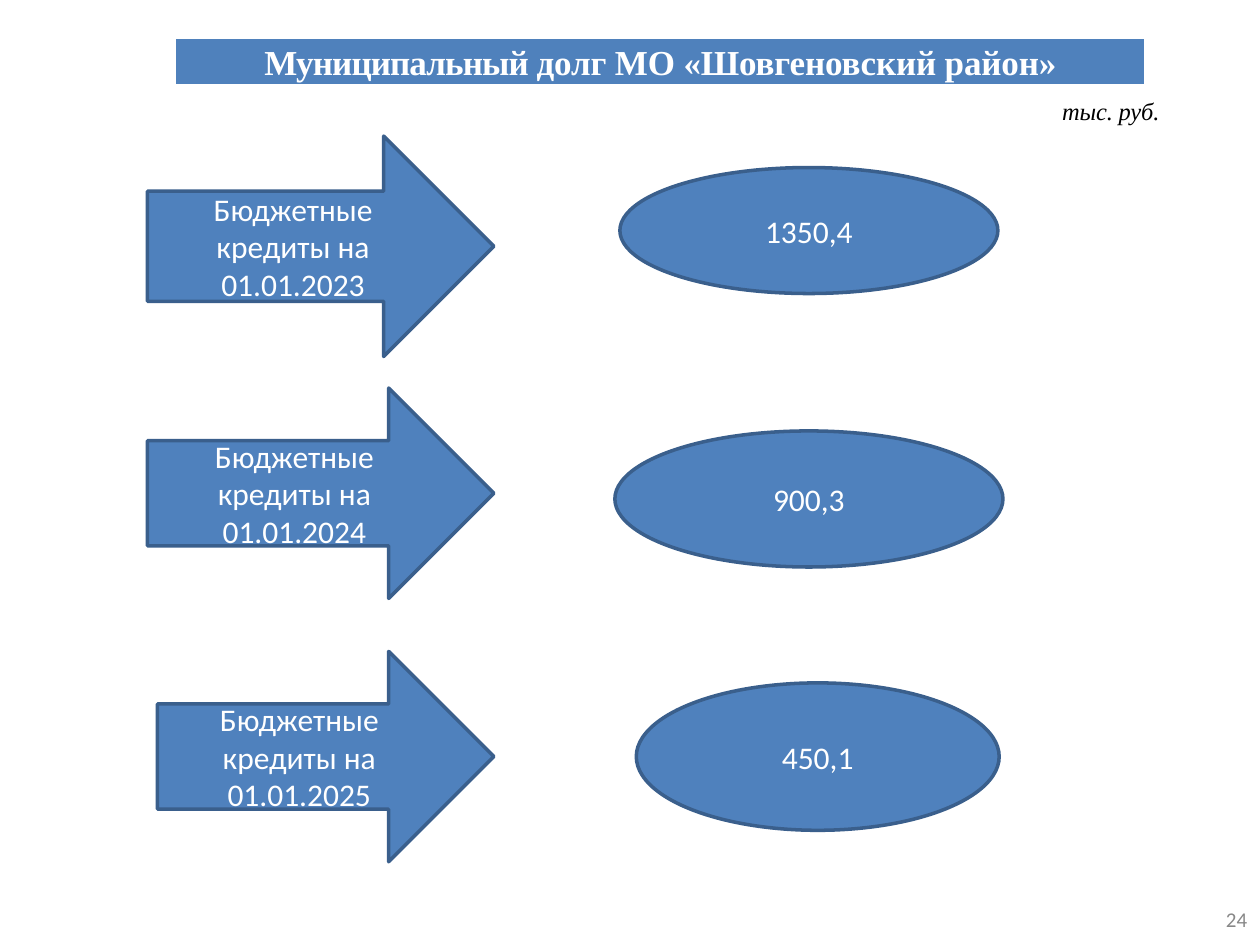
from dataclasses import dataclass

from pptx import Presentation
from pptx.dml.color import RGBColor
from pptx.enum.shapes import MSO_SHAPE
from pptx.enum.text import MSO_ANCHOR, PP_ALIGN
from pptx.util import Inches, Pt


@dataclass(frozen=True)
class Theme:
    banner: RGBColor = RGBColor(0x4F, 0x81, 0xBC)
    fill: RGBColor = RGBColor(0x4F, 0x81, 0xBD)
    outline: RGBColor = RGBColor(0x3A, 0x5F, 0x8C)
    white: RGBColor = RGBColor(0xFF, 0xFF, 0xFF)
    black: RGBColor = RGBColor(0, 0, 0)
    muted: RGBColor = RGBColor(0x88, 0x88, 0x88)
    serif: str = "Times New Roman"
    sans: str = "Calibri"
    title_size: int = 20
    body_size: int = 18
    unit_size: int = 14
    number_size: int = 12


@dataclass(frozen=True)
class Box:
    left: float
    top: float
    width: float
    height: float

    def lengths(self) -> tuple:
        return tuple(map(Inches, (self.left, self.top, self.width, self.height)))


@dataclass(frozen=True)
class Debt:
    date: str
    amount: str
    arrow: Box
    oval: Box


THEME = Theme()
DEBTS = (
    Debt("01.01.2023", "1350,4", Box(1.17, 1.08, 2.75, 1.75), Box(4.92, 1.33, 3, 1)),
    Debt("01.01.2024", "900,3", Box(1.17, 3.08, 2.75, 1.67), Box(4.88, 3.42, 3.08, 1.08)),
    Debt("01.01.2025", "450,1", Box(1.25, 5.17, 2.67, 1.67), Box(5.05, 5.42, 2.88, 1.17)),
)


def set_margins(frame, left: float, top: float) -> None:
    frame.margin_left, frame.margin_top = Inches(left), Inches(top)
    frame.margin_right = frame.margin_bottom = 0


def style_font(paragraph, name: str, size: int, color: RGBColor) -> None:
    paragraph.font.name = name
    paragraph.font.size = Pt(size)
    paragraph.font.color.rgb = color


def add_tracked_run(paragraph, text: str, points: float) -> None:
    run = paragraph.add_run()
    run.text = text
    run._r.get_or_add_rPr().set("spc", str(round(points * 100)))


def add_figure(slide, kind: MSO_SHAPE, box: Box, fill: RGBColor,
               outline: RGBColor, weight: float):
    figure = slide.shapes.add_shape(kind, *box.lengths())
    figure.shadow.inherit = False
    figure.fill.solid()
    figure.fill.fore_color.rgb = fill
    figure.line.color.rgb = outline
    figure.line.width = Pt(weight)
    figure.text_frame.word_wrap = True
    figure.text_frame.vertical_anchor = MSO_ANCHOR.MIDDLE
    figure.text_frame.paragraphs[0].alignment = PP_ALIGN.CENTER
    return figure


def add_label(slide, kind: MSO_SHAPE, box: Box, text: str) -> None:
    figure = add_figure(slide, kind, box, THEME.fill, THEME.outline, 2)
    paragraph = figure.text_frame.paragraphs[0]
    paragraph.add_run().text = text
    style_font(paragraph, THEME.sans, THEME.body_size, THEME.white)


def add_title(slide) -> None:
    banner = add_figure(slide, MSO_SHAPE.RECTANGLE, Box(1.38, 0.29, 7.72, 0.4),
                        THEME.banner, THEME.white, 3)
    set_margins(banner.text_frame, 0, 0)
    paragraph = banner.text_frame.paragraphs[0]
    add_tracked_run(paragraph, "Муниципальный ", -0.5)
    add_tracked_run(paragraph, "долг МО «Шовгеновский район»", -0.1)
    style_font(paragraph, THEME.serif, THEME.title_size, THEME.white)
    paragraph.font.bold = True


def add_note(slide, box: Box, left: float, top: float):
    frame = slide.shapes.add_textbox(*box.lengths()).text_frame
    frame.word_wrap = True
    set_margins(frame, left, top)
    return frame.paragraphs[0]


def main() -> None:
    deck = Presentation()
    deck.slide_width, deck.slide_height = Inches(10), Inches(7.5)
    slide = deck.slides.add_slide(deck.slide_layouts[6])

    add_title(slide)

    unit = add_note(slide, Box(8.42, 0.75, 1.06, 0.25), 0.01, 0.01)
    add_tracked_run(unit, "тыс. руб.", -0.1)
    style_font(unit, THEME.serif, THEME.unit_size, THEME.black)
    unit.font.italic = True

    page_number = add_note(slide, Box(9.69, 7.22, 0.27, 0.25), 0.04, 0)
    page_number.add_run().text = "24"
    page_number.line_spacing = Pt(12.4)
    style_font(page_number, THEME.sans, THEME.number_size, THEME.muted)

    for debt in DEBTS:
        add_label(slide, MSO_SHAPE.RIGHT_ARROW, debt.arrow,
                  f"Бюджетные кредиты на {debt.date}")
    for debt in DEBTS:
        add_label(slide, MSO_SHAPE.OVAL, debt.oval, debt.amount)

    deck.save("out.pptx")


if __name__ == "__main__":
    main()
